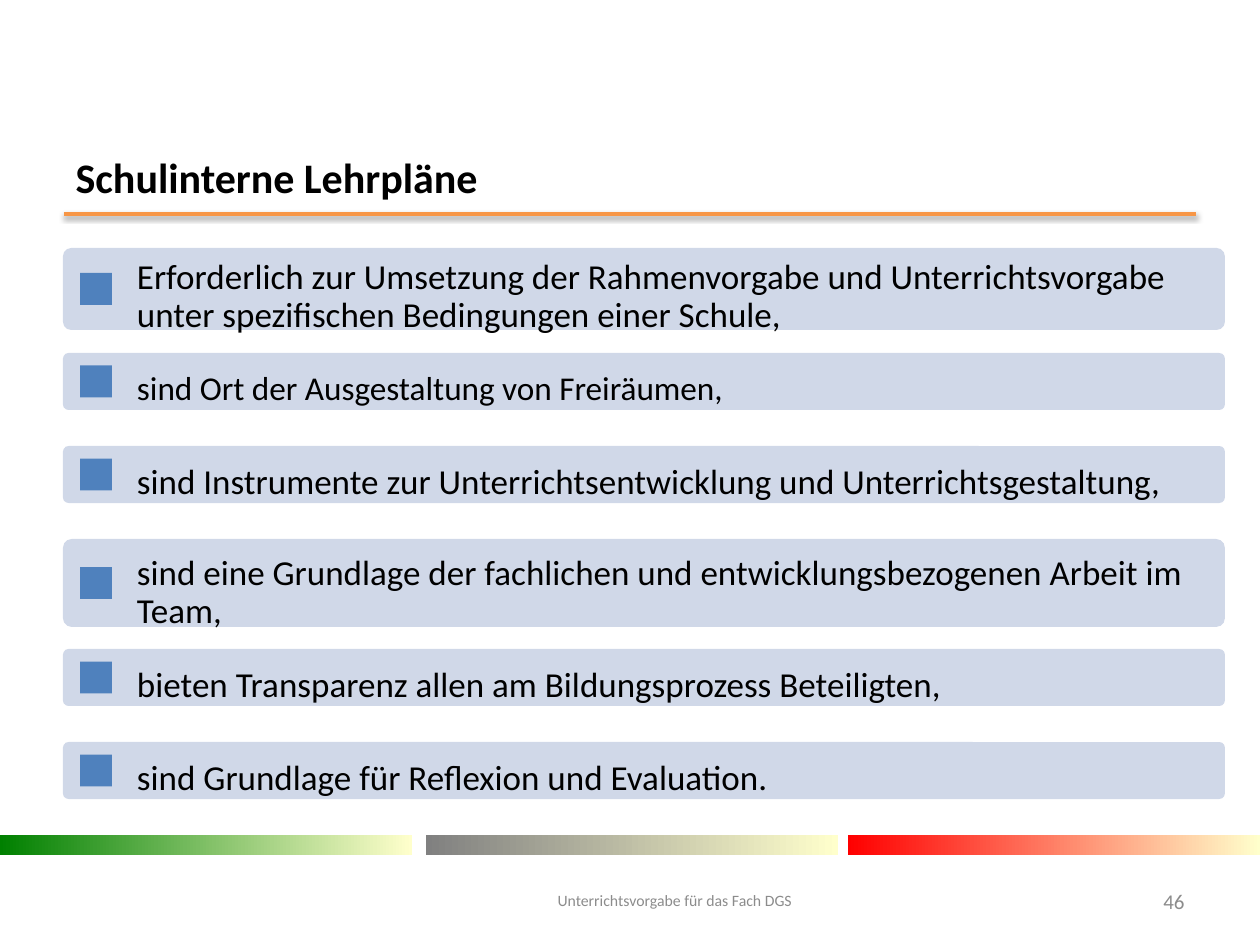
from dataclasses import dataclass

from lxml.etree import SubElement
from pptx import Presentation
from pptx.dml.color import RGBColor
from pptx.enum.shapes import MSO_CONNECTOR, MSO_SHAPE
from pptx.enum.text import MSO_ANCHOR, PP_ALIGN
from pptx.oxml.ns import qn
from pptx.util import Pt

# Content
TITLE = "Schulinterne Lehrpläne"
FOOTER = "Unterrichtsvorgabe für das Fach DGS"
PAGE_NUMBER = "46"
# text, type size, card height, text offset below the card top
STATEMENTS = [
    ("Erforderlich zur Umsetzung der Rahmenvorgabe und Unterrichtsvorgabe "
     "unter spezifischen Bedingungen einer Schule,", 20, 82, 12),
    ("sind Ort der Ausgestaltung von Freiräumen,", 19, 57, 0),
    ("sind Instrumente zur Unterrichtsentwicklung und Unterrichtsgestaltung,", 20, 57, 0),
    ("sind eine Grundlage der fachlichen und entwicklungsbezogenen Arbeit im Team,",
     20, 88, 17),
    ("bieten Transparenz allen am Bildungsprozess Beteiligten,", 20, 57, 0),
    ("sind Grundlage für Reflexion und Evaluation.", 20, 57, 0),
]
STRIPES = [(0, "008000"), (426, "808080"), (848, "FF0000")]  # left, start colour


@dataclass(frozen=True)
class Theme:
    font: str = "Calibri"
    ink: str = "000000"
    muted: str = "8C8C8C"
    card: str = "D0D8E8"
    marker: str = "4F81BD"
    rule: str = "F79646"
    stripe_end: str = "FFFFCC"
    title_size: int = 24
    footer_size: int = 9
    number_size: int = 12


THEME = Theme()
PX = 914400 / 126
CARD_LEFT, CARD_TOP, CARD_WIDTH = 63, 248, 1162
TEXT_LEFT, TEXT_WIDTH, TEXT_HEIGHT, TEXT_GAP = 129, 1087, 74, 19
MARKER_LEFT, MARKER_SIZE = 80, 32
TEXT_INSET = 8


def px(*lengths):
    return [round(length * PX) for length in lengths]


def color(value):
    return RGBColor.from_string(value)


def add_block(page, kind, place, fill=None):
    block = page.shapes.add_shape(kind, *px(*place))
    block.shadow.inherit = False
    block.line.fill.background()
    if fill:
        block.fill.solid()
        block.fill.fore_color.rgb = color(fill)
    return block


def write(box, text, size, ink=THEME.ink, align=PP_ALIGN.LEFT, bold=False, spacing=0.9):
    frame = box.text_frame
    frame.word_wrap = True
    frame.vertical_anchor = MSO_ANCHOR.MIDDLE
    para = frame.paragraphs[0]
    para.text = text
    para.alignment = align
    para.line_spacing = spacing
    para.font.name = THEME.font
    para.font.size = Pt(size)
    para.font.bold = bold
    para.font.color.rgb = color(ink)
    return frame


def add_text(page, place, text, size, **style):
    return write(page.shapes.add_textbox(*px(*place)), text, size, **style)


def add_rule(page):
    rule = page.shapes.add_connector(MSO_CONNECTOR.STRAIGHT, *px(64, 214, 1196, 214))
    rule.line.color.rgb = color(THEME.rule)
    rule.line.width = Pt(2)
    effects = SubElement(rule._element.spPr, qn("a:effectLst"))
    shadow = SubElement(effects, qn("a:outerShdw"), blurRad=str(Pt(3.1)),
                        dist=str(Pt(1.6)), dir="5400000", rotWithShape="0")
    tint = SubElement(shadow, qn("a:srgbClr"), val="000000")
    SubElement(tint, qn("a:alpha"), val="38000")


def add_stripe(page, left, start):
    stripe = add_block(page, MSO_SHAPE.RECTANGLE, (left, 835, 412, 20))
    stripe.fill.gradient()
    stripe.fill.gradient_angle = 0
    for stop, value in zip(stripe.fill.gradient_stops, (start, THEME.stripe_end)):
        stop.color.rgb = color(value)


def add_statement(page, top, text, size, height, offset):
    card = add_block(page, MSO_SHAPE.ROUNDED_RECTANGLE,
                     (CARD_LEFT, top, CARD_WIDTH, height), THEME.card)
    card.adjustments[0] = 0.1
    marker_top = top + (height - MARKER_SIZE) / 2
    add_block(page, MSO_SHAPE.RECTANGLE,
              (MARKER_LEFT, marker_top, MARKER_SIZE, MARKER_SIZE), THEME.marker)
    frame = add_text(page, (TEXT_LEFT, top + offset, TEXT_WIDTH, TEXT_HEIGHT), text, size)
    (frame.margin_left, frame.margin_top,
     frame.margin_right, frame.margin_bottom) = px(*[TEXT_INSET] * 4)


def main():
    deck = Presentation()
    deck.slide_width, deck.slide_height = px(1260, 945)
    page = deck.slides.add_slide(deck.slide_layouts[5])

    # Heading and decoration
    add_rule(page)
    for left, start in STRIPES:
        add_stripe(page, left, start)
    title = page.shapes.title
    title.left, title.top, title.width, title.height = px(63, 155, 1134, 49)
    write(title, TITLE, THEME.title_size, bold=True)

    # Footer
    add_text(page, (471, 876, 407, 50), FOOTER, THEME.footer_size,
             ink=THEME.muted, align=PP_ALIGN.CENTER)
    add_text(page, (1116, 876, 81, 50), PAGE_NUMBER, THEME.number_size,
             ink=THEME.muted, align=PP_ALIGN.RIGHT, spacing=1.0)

    # Statements: each card starts a fixed gap below the previous text
    top = CARD_TOP
    for text, size, height, offset in STATEMENTS:
        add_statement(page, top, text, size, height, offset)
        top += offset + TEXT_HEIGHT + TEXT_GAP

    deck.save("out.pptx")


if __name__ == "__main__":
    main()
